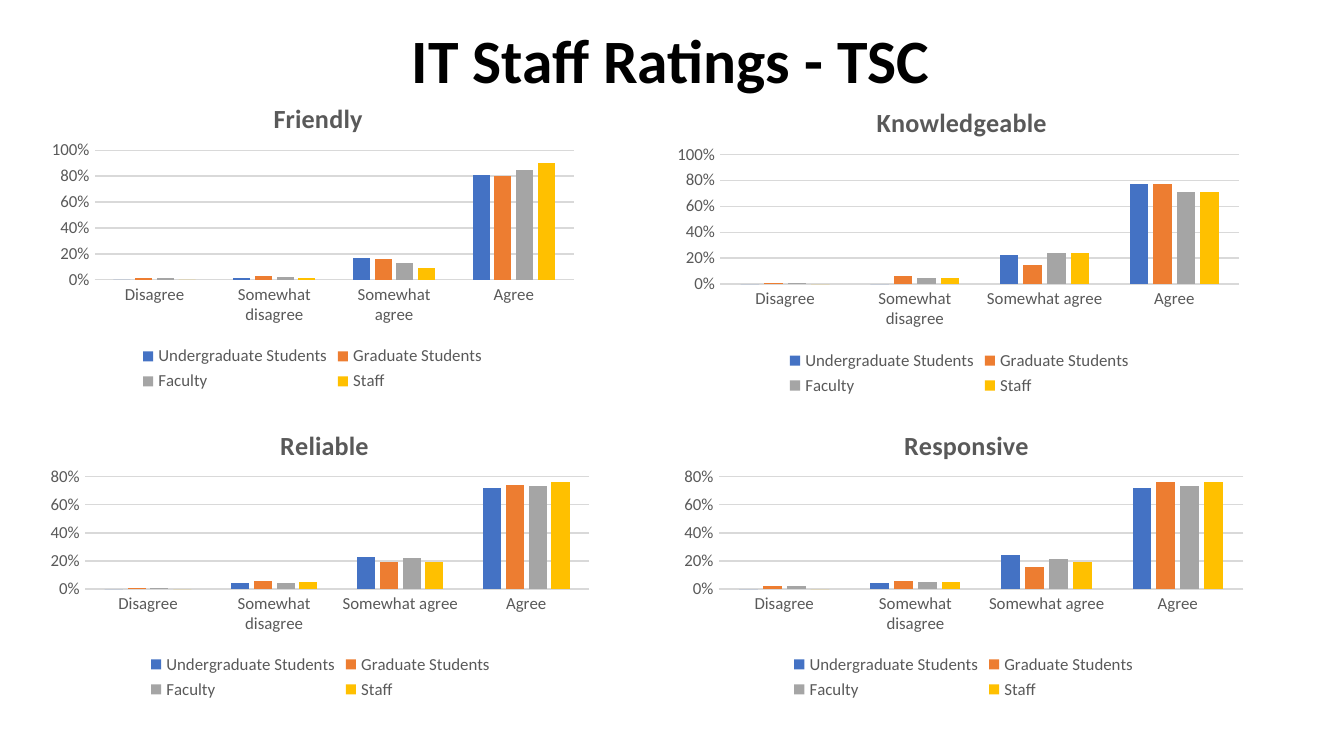
"""Build the IT staff ratings slide with four clustered column charts."""
from lxml import etree
from pptx import Presentation
from pptx.chart.data import CategoryChartData
from pptx.dml.color import RGBColor
from pptx.enum import chart as ch, text
from pptx.oxml import ns
from pptx.util import Cm, Pt

BLACK = RGBColor(0x00, 0x00, 0x00)
GRAY = RGBColor(0x59, 0x59, 0x59)
GRID = RGBColor(0xD9, 0xD9, 0xD9)
SERIES = {
    "Undergraduate Students": RGBColor(0x44, 0x72, 0xC4),
    "Graduate Students": RGBColor(0xED, 0x7D, 0x31),
    "Faculty": RGBColor(0xA5, 0xA5, 0xA5),
    "Staff": RGBColor(0xFF, 0xC0, 0x00),
}
CATEGORIES = ["Disagree", "Somewhat disagree", "Somewhat agree", "Agree"]
FONT = "Calibri"
RATINGS = [
    {"title": "Friendly", "box": (0.76, 1.37, 10.29, 6.12), "top": 1,
     "title_at": (0.42, 0.07), "plot": (0.1, 0.24, 0.88, 0.4),
     "values": [(0, 0.01, 0.17, 0.81), (0.01, 0.03, 0.16, 0.8),
                (0.01, 0.02, 0.13, 0.85), (0, 0.01, 0.09, 0.9)]},
    {"title": "Knowledgeable", "box": (12.62, 1.45, 11.02, 6.12), "top": 1,
     "title_at": (0.35, 0.07), "plot": (0.09, 0.24, 0.89, 0.4),
     "values": [(0, 0, 0.22, 0.77), (0.01, 0.06, 0.15, 0.77),
                (0.01, 0.05, 0.24, 0.71), (0, 0.05, 0.24, 0.71)]},
    {"title": "Reliable", "box": (0.76, 7.57, 10.59, 5.74), "top": 0.8,
     "title_at": (0.42, 0.07), "plot": (0.08, 0.25, 0.9, 0.37),
     "values": [(0, 0.04, 0.23, 0.72), (0.01, 0.06, 0.19, 0.74),
                (0.01, 0.04, 0.22, 0.73), (0, 0.05, 0.19, 0.76)]},
    {"title": "Responsive", "box": (12.7, 7.57, 11.02, 5.74), "top": 0.8,
     "title_at": (0.39, 0.07), "plot": (0.08, 0.25, 0.9, 0.37),
     "values": [(0, 0.04, 0.24, 0.72), (0.02, 0.06, 0.16, 0.76),
                (0.02, 0.05, 0.21, 0.73), (0, 0.05, 0.19, 0.76)]},
]


def set_attrs(obj, values):
    """Set each named attribute on an object."""
    for name, value in values.items():
        setattr(obj, name, value)


def set_font(font, size, color, bold=False):
    """Format a font."""
    set_attrs(font, {"name": FONT, "size": Pt(size), "bold": bold})
    font.color.rgb = color


def set_line(line):
    """Draw a thin light line."""
    line.width = Pt(0.75)
    line.color.rgb = GRID


def set_layout(parent, index, values, inner=False):
    """Place a chart part by fractions of the chart area."""
    for old in parent.findall(ns.qn("c:layout")):
        parent.remove(old)
    layout = etree.Element(ns.qn("c:layout"))
    manual = etree.SubElement(layout, ns.qn("c:manualLayout"))
    items = [("layoutTarget", "inner")] if inner else []
    items += [("xMode", "edge"), ("yMode", "edge")]
    items += zip("xywh", values)
    for tag, value in items:
        etree.SubElement(manual, ns.qn(f"c:{tag}")).set("val", str(value))
    parent.insert(index, layout)


def add_title(s, words):
    """Fill and place the slide title."""
    sp = s.shapes.title
    set_attrs(sp, {"left": Cm(1.73), "top": Cm(-0.18),
                   "width": Cm(21.89), "height": Cm(2.77)})
    tf = sp.text_frame
    set_attrs(tf, {"word_wrap": True, "auto_size": text.MSO_AUTO_SIZE.NONE,
                   "vertical_anchor": text.MSO_ANCHOR.MIDDLE})
    p = tf.paragraphs[0]
    set_attrs(p, {"alignment": text.PP_ALIGN.CENTER, "line_spacing": 0.9})
    r = p.add_run()
    r.text = words
    set_font(r.font, 33, BLACK, True)


def format_axes(chart, top):
    """Format the category and value axes."""
    for axis in (chart.category_axis, chart.value_axis):
        set_attrs(axis, {"major_tick_mark": ch.XL_TICK_MARK.NONE,
                         "minor_tick_mark": ch.XL_TICK_MARK.NONE})
        set_font(axis.tick_labels.font, 9, GRAY)
    set_line(chart.category_axis.format.line)
    axis = chart.value_axis
    set_attrs(axis, {"minimum_scale": 0, "maximum_scale": top,
                     "major_unit": 0.2, "has_major_gridlines": True})
    axis.format.line.fill.background()
    set_line(axis.major_gridlines.format.line)
    set_attrs(axis.tick_labels, {"number_format": "0%",
                                 "number_format_is_linked": False})


def add_rating_chart(s, rating):
    """Add one clustered column chart."""
    data = CategoryChartData(number_format="0%")
    data.categories = CATEGORIES
    for name, values in zip(SERIES, rating["values"]):
        data.add_series(name, values)
    box = [Cm(length) for length in rating["box"]]
    chart = s.shapes.add_chart(
        ch.XL_CHART_TYPE.COLUMN_CLUSTERED, *box, data).chart
    set_font(chart.font, 10, BLACK)
    set_attrs(chart, {"has_title": True, "has_legend": True})
    p = chart.chart_title.text_frame.paragraphs[0]
    r = p.add_run()
    r.text = rating["title"]
    set_font(r.font, 14, GRAY, True)
    set_layout(chart.element.find(".//" + ns.qn("c:title")), 1,
               rating["title_at"])
    set_layout(chart.element.find(".//" + ns.qn("c:plotArea")), 0,
               rating["plot"], inner=True)
    set_attrs(chart.legend, {"position": ch.XL_LEGEND_POSITION.BOTTOM,
                             "include_in_layout": False})
    set_font(chart.legend.font, 9, GRAY)
    plot = chart.plots[0]
    set_attrs(plot, {"gap_width": 219, "overlap": -27,
                     "vary_by_categories": False})
    for series, color in zip(plot.series, SERIES.values()):
        series.format.fill.solid()
        series.format.fill.fore_color.rgb = color
    format_axes(chart, rating["top"])


def main():
    """Build and save the slide."""
    prs = Presentation()
    set_attrs(prs, {"slide_width": Cm(25.4), "slide_height": Cm(14.28)})
    s = prs.slides.add_slide(prs.slide_layouts[5])
    add_title(s, "IT Staff Ratings - TSC")
    for rating in RATINGS:
        add_rating_chart(s, rating)
    prs.save("out.pptx")


if __name__ == "__main__":
    main()
